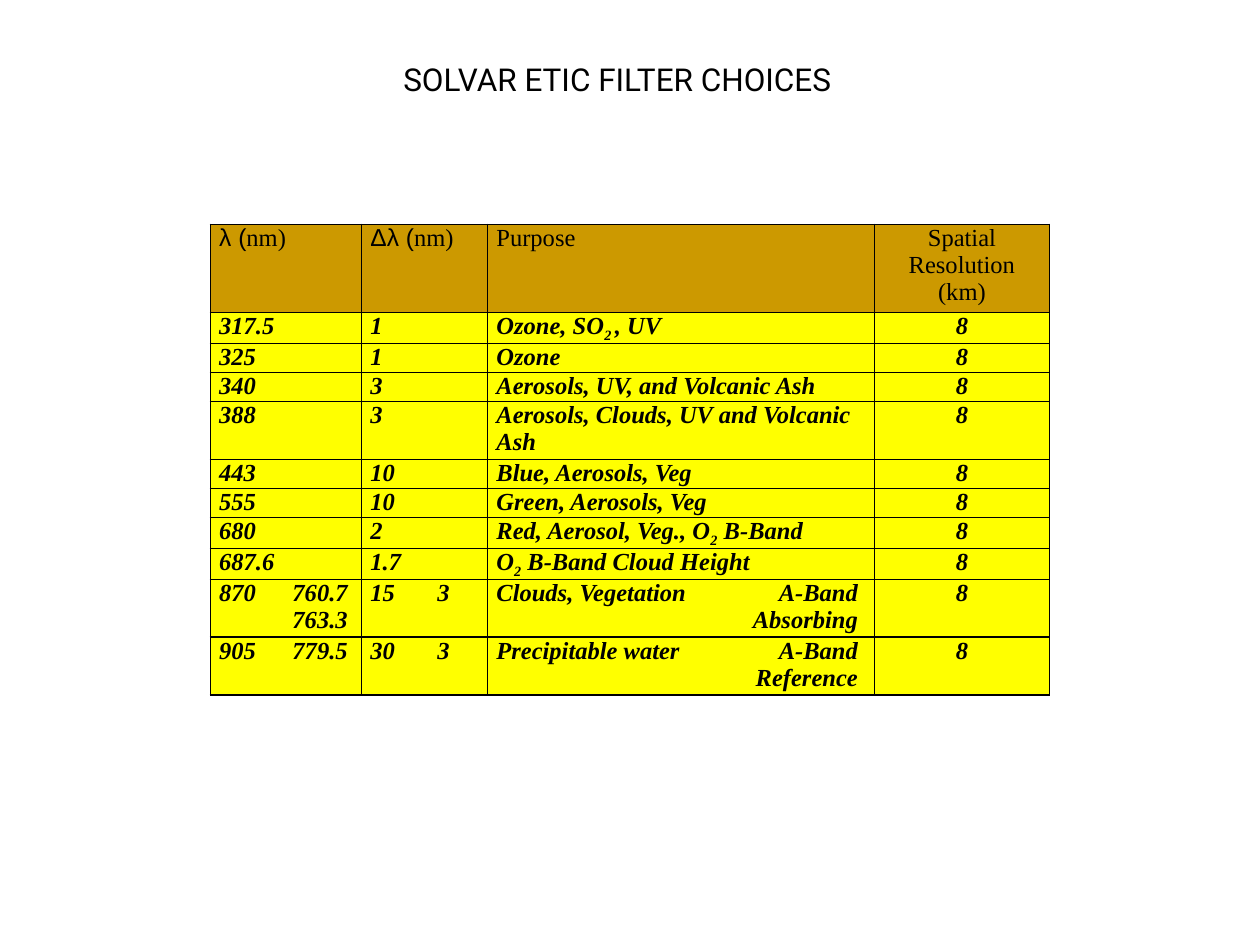
from lxml import etree
from pptx import Presentation
from pptx import util as u
from pptx.dml.color import RGBColor
from pptx.enum import text
from pptx.oxml.ns import qn

BLACK = RGBColor(0x00, 0x00, 0x00)
GOLD = RGBColor(0xCC, 0x99, 0x00)
YELLOW = RGBColor(0xFF, 0xFF, 0x00)

SERIF = "Times New Roman"
HEADER_FONT = {"name": SERIF, "size": u.Pt(14)}
BODY_FONT = HEADER_FONT | {"bold": True, "italic": True}

TITLE = "SOLVAR ETIC FILTER CHOICES"
# A cell is text, with one paragraph per line, or a list of (text, style) spans.
HEADER = ([("λ (", "symbol"), ("nm)", "")], [("Δλ (", "symbol"), ("nm)", "")],
          "Purpose", "Spatial Resolution (km)")
FILTERS = [
    ("317.5", "1", [("Ozone, SO", ""), ("2 ", "sub"), (", UV", "")]),
    ("325", "1", "Ozone"),
    ("340", "3", "Aerosols, UV, and Volcanic Ash"),
    ("388", "3", "Aerosols, Clouds, UV and Volcanic Ash"),
    ("443", "10", "Blue, Aerosols, Veg"),
    ("555", "10", "Green, Aerosols, Veg"),
    ("680", "2", [("Red, Aerosol, Veg., O", ""), ("2", "sub"), (" B-Band", "")]),
    ("687.6", "1.7", [("O", ""), ("2", "sub"), (" B-Band Cloud Height", "")]),
    ("870\t760.7\n\t763.3", "15\t3", "Clouds, Vegetation\tA-Band\n\tAbsorbing"),
    ("905\t779.5", "30\t3", "Precipitable water\tA-Band\n\tReference"),
]
RESOLUTION = "8"

COLUMN_WIDTHS = (1.2, 1, 3.07, 1.39)
RIGHT_TABS = (1.02, 0.63, 2.87, None)
HEADER_HEIGHT, LINE_HEIGHT = 0.7, 0.23
TALL_ROWS = (4, 9, 10)


def format_font(font, values):
    for name, value in values.items():
        setattr(font, name, value)
    font.color.rgb = BLACK


def add_right_tab(para, inches):
    tabs = etree.SubElement(para._p.get_or_add_pPr(), qn("a:tabLst"))
    etree.SubElement(tabs, qn("a:tab"), pos=str(u.Inches(inches)), algn="r")


def add_borders(cell):
    properties = cell._tc.get_or_add_tcPr()
    for side in ("lnL", "lnR", "lnT", "lnB"):
        line = etree.SubElement(properties, qn(f"a:{side}"), w=str(u.Pt(1)))
        fill = etree.SubElement(line, qn("a:solidFill"))
        etree.SubElement(fill, qn("a:srgbClr"), val=str(BLACK))


def fill_cell(cell, content, font, color, tab, centred):
    add_borders(cell)
    cell.fill.solid()
    cell.fill.fore_color.rgb = color
    cell.margin_left = cell.margin_right = u.Inches(0.07)
    cell.margin_top = cell.margin_bottom = 0
    lines = ([[(line, "")] for line in content.split("\n")]
             if isinstance(content, str) else [content])
    for index, spans in enumerate(lines):
        frame = cell.text_frame
        para = frame.add_paragraph() if index else frame.paragraphs[0]
        if centred:
            para.alignment = text.PP_ALIGN.CENTER
        if any("\t" in words for words, _ in spans):
            add_right_tab(para, tab)
        for words, style in spans:
            span = para.add_run()
            span.text = words
            format_font(span.font, font)
            if style == "symbol":
                span.font.name = "Arial"
            elif style == "sub":
                span.font._element.set("baseline", "-25000")


def add_title(page):
    title = page.shapes.title
    box = {"left": 0.98, "top": 0.43, "width": 7.84, "height": 0.4}
    for name, value in box.items():
        setattr(title, name, u.Inches(value))
    title.text_frame.vertical_anchor = text.MSO_ANCHOR.TOP
    para = title.text_frame.paragraphs[0]
    para.alignment = text.PP_ALIGN.CENTER
    span = para.add_run()
    span.text = TITLE
    format_font(span.font, {"name": "Roboto", "size": u.Pt(18)})


def add_filter_table(page):
    rows = [HEADER] + [(*row, RESOLUTION) for row in FILTERS]
    heights = [HEADER_HEIGHT] + [LINE_HEIGHT * (2 if row in TALL_ROWS else 1)
                                 for row in range(1, len(rows))]
    table = page.shapes.add_table(
        len(rows), len(COLUMN_WIDTHS), u.Inches(1.67), u.Inches(1.78),
        u.Inches(sum(COLUMN_WIDTHS)), u.Inches(sum(heights))).table
    table.first_row = table.horz_banding = False
    for column, width in zip(table.columns, COLUMN_WIDTHS):
        column.width = u.Inches(width)
    for row, height in zip(table.rows, heights):
        row.height = u.Inches(height)
    for r, row in enumerate(rows):
        font, color = (BODY_FONT, YELLOW) if r else (HEADER_FONT, GOLD)
        for c, content in enumerate(row):
            fill_cell(table.cell(r, c), content, font, color,
                      RIGHT_TABS[c], centred=c == len(row) - 1)


def main():
    deck = Presentation()
    deck.slide_width, deck.slide_height = u.Inches(10), u.Inches(7.5)
    page = deck.slides.add_slide(deck.slide_layouts.get_by_name("Title Only"))
    add_title(page)
    add_filter_table(page)
    deck.save("out.pptx")


if __name__ == "__main__":
    main()
